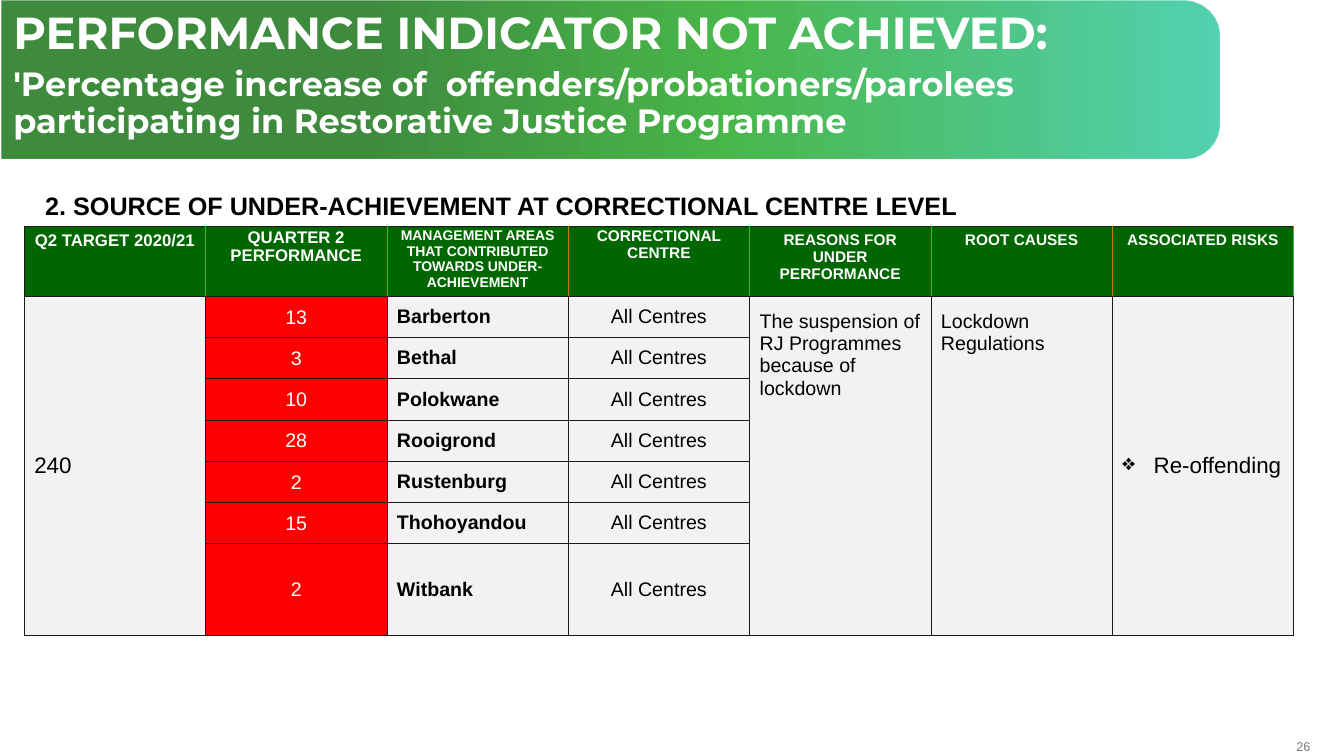
import pptx
import pptx.util
import pptx.dml.color
import pptx.enum.shapes
import pptx.enum.text
import pptx.oxml
import pptx.oxml.ns
from lxml import etree

Cm, Pt = pptx.util.Cm, pptx.util.Pt
RGBColor = pptx.dml.color.RGBColor
ALIGN, ANCHOR = pptx.enum.text.PP_ALIGN, pptx.enum.text.MSO_ANCHOR
qn = pptx.oxml.ns.qn

TITLE = [
    ("PERFORMANCE INDICATOR NOT ACHIEVED:", 32),
    ("'Percentage increase of  offenders/probationers/parolees "
     "participating in Restorative Justice Programme", 24),
]
HEADING = "2. SOURCE OF UNDER-ACHIEVEMENT AT CORRECTIONAL CENTRE LEVEL"
HEADERS = [
    ("Q2 TARGET 2020/21", 12, False),
    ("QUARTER 2\vPERFORMANCE", 12, True),
    ("MANAGEMENT AREAS THAT CONTRIBUTED TOWARDS UNDER-ACHIEVEMENT", 10, True),
    ("CORRECTIONAL CENTRE", 11, True),
    ("REASONS FOR UNDER\nPERFORMANCE", 11, False),
    ("ROOT CAUSES", 11, False),
    ("ASSOCIATED RISKS", 11, False),
]
AREAS = [
    ("13", "Barberton"), ("3", "Bethal"), ("10", "Polokwane"),
    ("28", "Rooigrond"), ("2", "Rustenburg"), ("15", "Thohoyandou"),
    ("2", "Witbank"),
]
CENTRES = "All Centres"
TARGET = "240"
REASON = "The suspension of RJ Programmes because of lockdown"
ROOT_CAUSE = "Lockdown Regulations"
RISK = "Re-offending"
PAGE = "26"

WHITE = RGBColor(0xFF, 0xFF, 0xFF)
BLACK = RGBColor(0, 0, 0)
GREEN = RGBColor(0, 0x66, 0)
RED = RGBColor(0xFF, 0, 0)
PALE = RGBColor(0xF2, 0xF2, 0xF2)
GREY = RGBColor(0x77, 0x78, 0x7B)
INK = RGBColor(0x1E, 0x19, 0x18)
OCHRE = RGBColor(0xBF, 0x7B, 0x17)
BANNER_STOPS = [
    (30, GREEN, 75),
    (59, RGBColor(0, 0x99, 0), 71),
    (100, RGBColor(0, 0xBC, 0x8D), 67),
]

COL_WIDTH = 4.57
ROW_HEIGHTS = [1.75] + [1.04] * 6 + [2.31]


def set_font(p, size, color, bold=False, name="Arial"):
    p.font.name, p.font.size, p.font.bold = name, Pt(size), bold
    p.font.color.rgb = color


def add_text(s, box, text, size, color, bold=False, align=ALIGN.LEFT):
    tf = s.shapes.add_textbox(*map(Cm, box)).text_frame
    tf.word_wrap = True
    tf.text = text
    tf.paragraphs[0].alignment = align
    set_font(tf.paragraphs[0], size, color, bold)
    return tf


def add_banner(s):
    sp = s.shapes.add_shape(pptx.enum.shapes.MSO_SHAPE.ROUND_2_SAME_RECTANGLE,
                            Cm(13.39), Cm(-13.33), Cm(3.99), Cm(30.68))
    sp.rotation = 90
    sp.adjustments[0], sp.adjustments[1] = 0.23, 0
    sp.shadow.inherit = False
    sp.line.fill.background()
    stops = "".join(
        f'<a:gs pos="{pos * 1000}"><a:srgbClr val="{color}">'
        f'<a:alpha val="{alpha * 1000}"/></a:srgbClr></a:gs>'
        for pos, color, alpha in BANNER_STOPS)
    grad = pptx.oxml.parse_xml(
        f'<a:gradFill {pptx.oxml.ns.nsdecls("a")} rotWithShape="1">'
        f'<a:gsLst>{stops}</a:gsLst>'
        f'<a:lin ang="16200000" scaled="0"/></a:gradFill>')
    sp._element.spPr.find(qn("a:prstGeom")).addnext(grad)
    return sp


def add_title(s):
    title = s.shapes.title
    title.left, title.top, title.width, title.height = map(
        Cm, (0.08, 0.15, 30.43, 3.7))
    tf = title.text_frame
    tf.word_wrap = True
    tf.auto_size = pptx.enum.text.MSO_AUTO_SIZE.NONE
    tf.vertical_anchor = ANCHOR.TOP
    tf.text = "\n".join(text for text, size in TITLE)
    for p, (text, size) in zip(tf.paragraphs, TITLE):
        p.alignment = ALIGN.LEFT
        p.line_spacing, p.space_after = 0.9, Pt(6)
        set_font(p, size, WHITE, True, "Montserrat")
    return title


def set_borders(cell, colors):
    tcPr = cell._tc.get_or_add_tcPr()
    for i, (side, color) in enumerate(zip("LRTB", colors)):
        ln = etree.Element(qn(f"a:ln{side}"), w=str(Pt(0.5)))
        fill = etree.SubElement(ln, qn("a:solidFill"))
        etree.SubElement(fill, qn("a:srgbClr"), val=str(color))
        tcPr.insert(i, ln)


def fill_cell(cell, text, size, fill, color=BLACK, bold=False,
              align=ALIGN.LEFT, anchor=ANCHOR.MIDDLE, tight=False):
    cell.fill.solid()
    cell.fill.fore_color.rgb = fill
    cell.vertical_anchor = anchor
    if tight:
        cell.margin_left = cell.margin_right = cell.margin_top = Cm(0.03)
        cell.margin_bottom = 0
    cell.text_frame.text = text
    for p in cell.text_frame.paragraphs:
        p.alignment = align
        set_font(p, size, color, bold)


def add_bullet(p):
    pPr = p._p.get_or_add_pPr()
    pPr.set("marL", str(Cm(0.79)))
    pPr.set("indent", str(-Cm(0.79)))
    bullet = etree.Element(qn("a:buChar"), char="❖")
    pPr.insert(0, bullet)


def add_performance_table(s):
    rows, cols = len(ROW_HEIGHTS), len(HEADERS)
    table = s.shapes.add_table(rows, cols, Cm(0.61), Cm(5.71),
                               Cm(COL_WIDTH * cols),
                               Cm(sum(ROW_HEIGHTS))).table
    table.first_row = table.horz_banding = False
    for col in table.columns:
        col.width = Cm(COL_WIDTH)
    for row, height in zip(table.rows, ROW_HEIGHTS):
        row.height = Cm(height)

    for c, (text, size, tight) in enumerate(HEADERS):
        fill_cell(table.cell(0, c), text, size, GREEN, WHITE, True,
                  ALIGN.CENTER, ANCHOR.TOP, tight)
    for r, (count, area) in enumerate(AREAS, 1):
        fill_cell(table.cell(r, 1), count, 14, RED, WHITE,
                  align=ALIGN.CENTER, tight=True)
        fill_cell(table.cell(r, 2), area, 14, PALE, bold=True)
        fill_cell(table.cell(r, 3), CENTRES, 14, PALE, align=ALIGN.CENTER)

    merged = [(0, TARGET, 16, ANCHOR.MIDDLE), (4, REASON, 14, ANCHOR.TOP),
              (5, ROOT_CAUSE, 14, ANCHOR.TOP), (6, RISK, 16, ANCHOR.MIDDLE)]
    for c, text, size, anchor in merged:
        cell = table.cell(1, c)
        cell.merge(table.cell(rows - 1, c))
        fill_cell(cell, text, size, PALE, anchor=anchor)
        if anchor == ANCHOR.TOP:
            cell.margin_top = Cm(0.38)
    add_bullet(table.cell(1, 6).text_frame.paragraphs[0])

    for r in range(rows):
        for c in range(cols):
            left = OCHRE if r == 0 and c > 0 else INK
            right = OCHRE if r == 0 else INK
            set_borders(table.cell(r, c), (left, right, INK, INK))


def main():
    prs = pptx.Presentation()
    prs.slide_width, prs.slide_height = Cm(33.87), Cm(19.05)
    s = prs.slides.add_slide(prs.slide_layouts[5])
    banner = add_banner(s)
    title = add_title(s)
    title._element.addprevious(banner._element)
    heading = add_text(s, (0, 4.67, 25.4, 1.02), HEADING, 18, BLACK, True)
    heading.margin_left = Cm(1.14)
    add_performance_table(s)
    page = add_text(s, (32.03, 18.62, 0.99, 0.38), PAGE, 9, GREY,
                    align=ALIGN.RIGHT)
    page.margin_left = page.margin_right = 0
    page.margin_top = page.margin_bottom = 0
    page.vertical_anchor = ANCHOR.MIDDLE
    prs.save("out.pptx")


if __name__ == "__main__":
    main()
